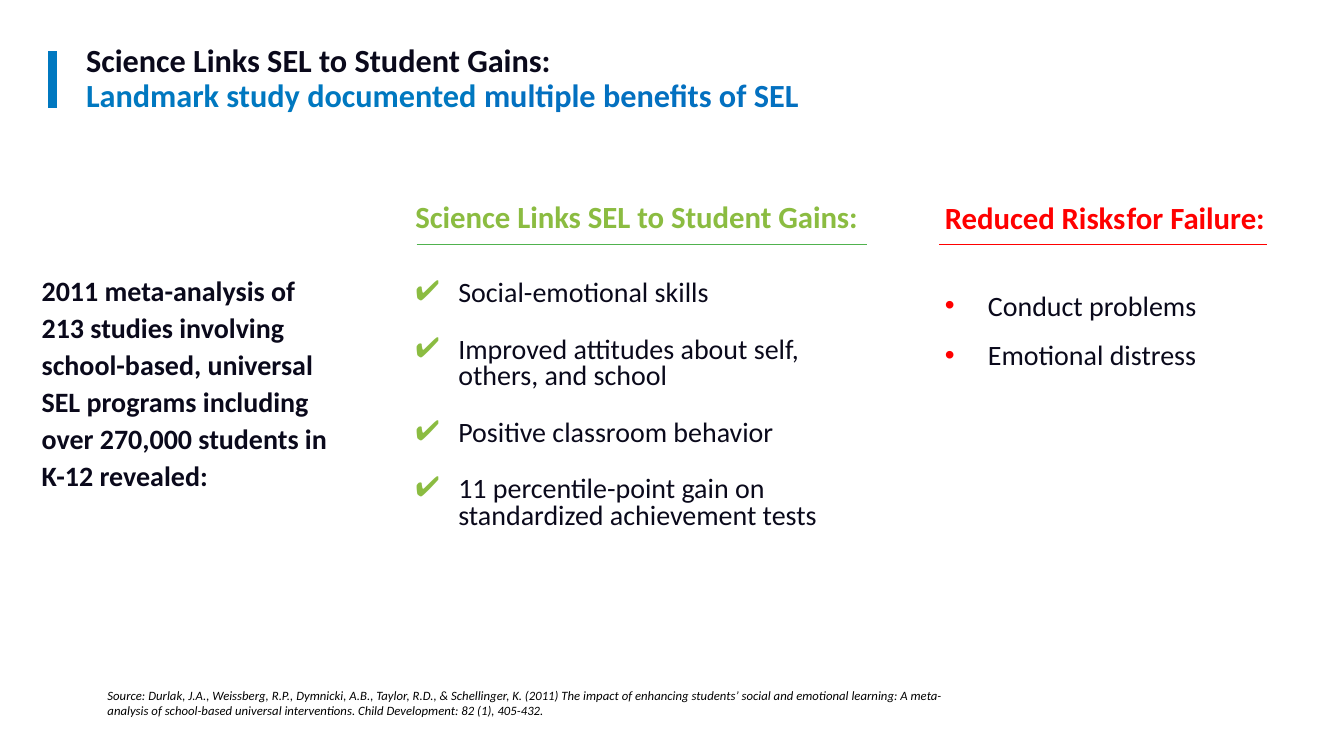
from lxml.etree import SubElement
from pptx import Presentation
from pptx.dml.color import RGBColor
from pptx.enum.shapes import MSO_CONNECTOR as Connector
from pptx.enum.text import MSO_ANCHOR as Anchor, MSO_AUTO_SIZE as AutoSize, PP_ALIGN as Align
from pptx.oxml.ns import qn
from pptx.util import Inches, Pt

COLORS = {
    "ink": "0A091B",
    "blue": "0078C0",
    "deep_blue": "0370C0",
    "green": "8BBC41",
    "rule_green": "50B24E",
    "red": "FF0000",
    "black": "000000",
}


def color(name):
    return RGBColor.from_string(COLORS[name])


def place(shape, box):
    shape.left, shape.top, shape.width, shape.height = (Inches(side) for side in box)


def prepare_frame(shape, inset_x, inset_y):
    frame = shape.text_frame
    frame.word_wrap = True
    frame.auto_size = AutoSize.NONE
    frame.vertical_anchor = Anchor.TOP
    frame.margin_left = frame.margin_right = Inches(inset_x)
    frame.margin_top = frame.margin_bottom = Inches(inset_y)
    return frame


def format_paragraph(para, spacing=1.0, before=0, bullet=None, bullet_color=None):
    props = para._p.get_or_add_pPr()
    props.set("marL", str(Inches(0.32) if bullet else 0))
    props.set("indent", str(Inches(-0.32) if bullet else 0))
    if bullet:
        fill = SubElement(props, qn("a:buClr"))
        SubElement(fill, qn("a:srgbClr"), val=COLORS[bullet_color])
        SubElement(props, qn("a:buFont"), typeface="Arial")
        SubElement(props, qn("a:buChar"), char=bullet)
    else:
        SubElement(props, qn("a:buNone"))
    para.alignment = Align.LEFT
    para.line_spacing = spacing
    para.space_before = Pt(before)
    para.space_after = Pt(0)


def add_text(para, text, size=15, fill="ink", bold=False, italic=False, font="Calibri"):
    span = para.add_run()
    span.text = text
    span.font.name = font
    span.font.size = Pt(size)
    span.font.bold = bold
    span.font.italic = italic
    span.font.color.rgb = color(fill)


def add_rule(page, start, end, fill, width):
    points = [Inches(value) for value in (*start, *end)]
    rule = page.shapes.add_connector(Connector.STRAIGHT, *points)
    rule.line.color.rgb = color(fill)
    rule.line.width = Pt(width)
    SubElement(rule._element.spPr, qn("a:effectLst"))


def add_title(page, box):
    left, top, _, _ = box
    add_rule(page, (left - 0.21, top + 0.07), (left - 0.21, top + 0.49), "blue", 5)
    title = page.shapes.title
    place(title, box)
    para = prepare_frame(title, 0.04, 0.02).paragraphs[0]
    format_paragraph(para, spacing=0.9)
    add_text(para, "Science Links SEL to Student Gains: ", size=17.3, bold=True)
    para.add_line_break()
    add_text(para, "Landmark study documented ", size=17.3, fill="blue", bold=True)
    add_text(para, "multiple benefits of SEL", size=17.3, fill="deep_blue", bold=True)


def add_findings(page, holder, box, heading, items, bullet, fill, rule_fill, rule_span, first_gap, gap):
    left, top, _, _ = box
    place(holder, box)
    frame = prepare_frame(holder, 0.04, 0.02)
    para = frame.paragraphs[0]
    format_paragraph(para)
    for index, part in enumerate(heading):
        if index:
            add_text(para, " ", size=2.3, fill="black", font="Arial")
        add_text(para, part, size=16.5, fill=fill, bold=True)
    for index, item in enumerate(items):
        para = frame.add_paragraph()
        format_paragraph(para, 0.8, gap if index else first_gap, bullet, fill)
        add_text(para, item)
    start, end = rule_span
    add_rule(page, (left + start, 1.82), (left + end, 1.82), rule_fill, 0.8)


def add_note(page, box, text, spacing=1.0, **style):
    note = page.shapes.add_textbox(*(Inches(side) for side in box))
    para = prepare_frame(note, 0.07, 0.04).paragraphs[0]
    format_paragraph(para, spacing=spacing)
    add_text(para, text, **style)


def main():
    deck = Presentation()
    deck.slide_width, deck.slide_height = Inches(10), Inches(5.625)
    page = deck.slides.add_slide(deck.slide_layouts[3])

    add_title(page, (0.6, 0.31, 5.98, 0.53))
    add_note(
        page, (0.24, 1.97, 2.37, 0.59),
        "2011 meta-analysis of 213 studies involving school-based, universal SEL programs "
        "including over 270,000 students in K-12 revealed:",
        spacing=1.1, bold=True,
    )
    add_findings(
        page, page.placeholders[1], (3.05, 1.45, 3.4, 2.38),
        ["Science Links SEL to Student Gains:"],
        [
            "Social-emotional skills",
            "Improved attitudes about self, others, and school",
            "Positive classroom behavior",
            "11 percentile-point gain on standardized achievement tests",
        ],
        "✔", "green", "rule_green", (0.05, 3.4), first_gap=25, gap=15.8,
    )
    add_findings(
        page, page.placeholders[2], (6.99, 1.46, 2.77, 1.62),
        ["Reduced Risks", "for Failure:"],
        ["Conduct problems", "Emotional distress"],
        "•", "red", "red", (0, 2.44), first_gap=31.8, gap=12,
    )
    add_note(
        page, (0.73, 5.08, 6.6, 0.3),
        "Source: Durlak, J.A., Weissberg, R.P., Dymnicki, A.B., Taylor, R.D., & Schellinger, K. (2011) "
        "The impact of enhancing students’ social and emotional learning: A meta-analysis of "
        "school-based universal interventions. Child Development: 82 (1), 405-432.",
        size=6.8, fill="black", italic=True,
    )
    deck.save("out.pptx")


if __name__ == "__main__":
    main()
